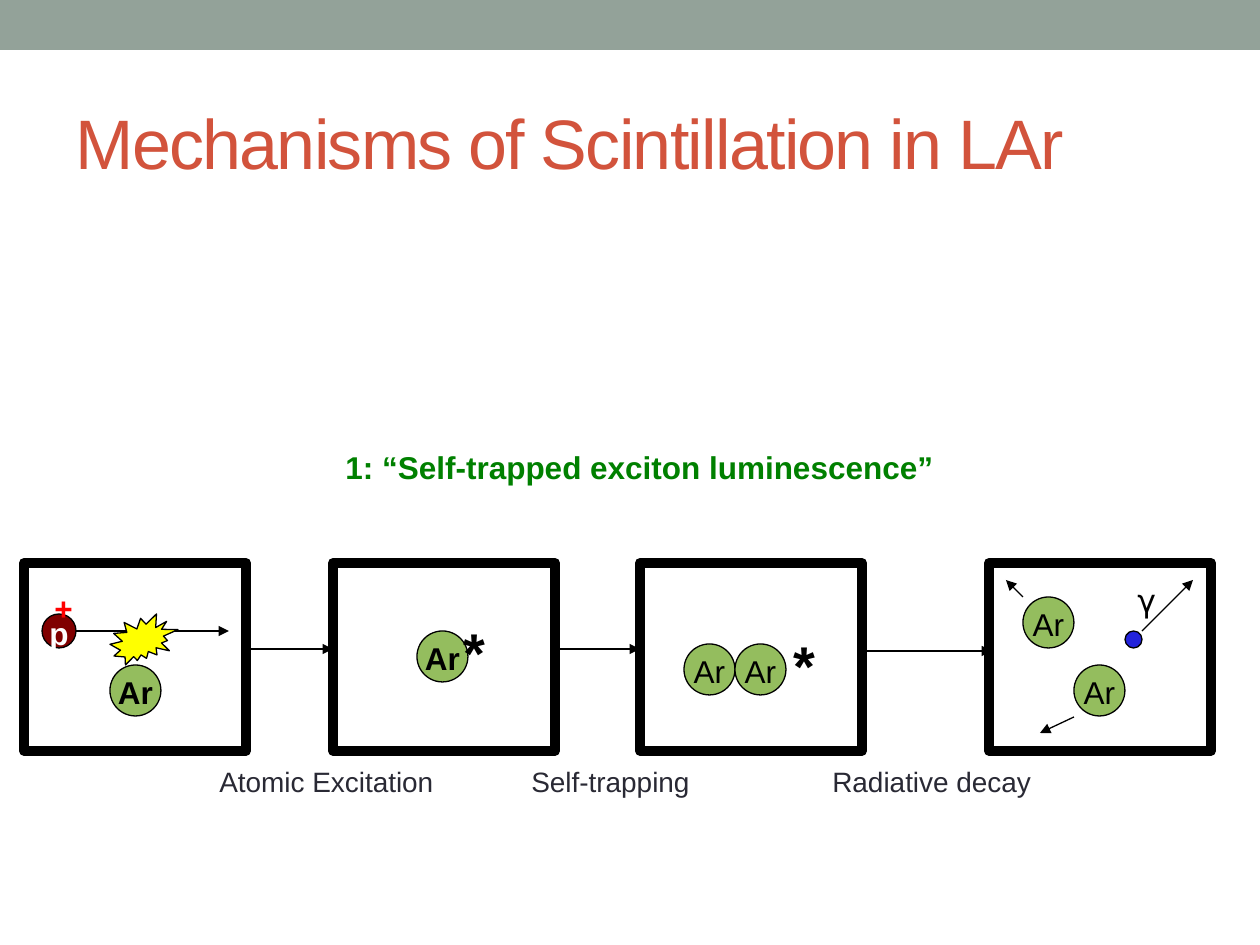
from dataclasses import dataclass

from pptx import Presentation
from pptx.dml.color import RGBColor
from pptx.enum.shapes import MSO_CONNECTOR, MSO_SHAPE
from pptx.enum.text import MSO_ANCHOR, PP_ALIGN
from pptx.oxml.ns import qn
from pptx.util import Emu, Pt
from lxml.etree import SubElement


@dataclass(frozen=True)
class Theme:
    font: str = "Arial"
    symbol_font: str = "DejaVu Sans"
    bar: str = "93A299"
    title: str = "D2533C"
    heading: str = "008000"
    caption: str = "292934"
    ink: str = "000000"
    paper: str = "FFFFFF"
    argon: str = "94BD5E"
    proton: str = "800000"
    charge: str = "FF0000"
    burst: str = "FFFF00"
    photon: str = "2323DC"
    title_size: int = 40
    star_size: int = 32
    label_size: int = 18
    caption_size: int = 16
    thin: float = 0.75
    thick: float = 5.67


T = Theme()
FRAME_TOP, FRAME_W, FRAME_H = 563, 222, 188
FRAME_LEFTS = (24, 333, 640, 989)
ATOM = 51
CAPTION_LEFTS = {"Atomic Excitation": 207, "Self-trapping": 519, "Radiative decay": 820}


def px(n):
    return Emu(round(n * 914400 / 126))


def rgb(value):
    return RGBColor.from_string(value)


def write(shape, text, size, color, bold=False, font=T.font, align=PP_ALIGN.LEFT):
    tf = shape.text_frame
    tf.text = text
    p = tf.paragraphs[0]
    p.alignment = align
    f = p.runs[0].font
    f.name, f.size, f.bold = font, Pt(size), bold
    f.color.rgb = rgb(color)


def add_title(s, text):
    title = s.shapes.title
    title.left, title.top, title.width, title.height = px(63), px(73), px(1134), px(136)
    title.text_frame.vertical_anchor = MSO_ANCHOR.MIDDLE
    write(title, text, T.title_size, T.title)
    title.text_frame.paragraphs[0].runs[0].font._element.set("spc", "-100")


def add_figure(s, kind, x, y, w, h, fill, line=T.thin):
    sp = s.shapes.add_shape(kind, px(x), px(y), px(w), px(h))
    sp.shadow.inherit = False
    sp.fill.solid()
    sp.fill.fore_color.rgb = rgb(fill)
    if line:
        sp.line.color.rgb = rgb(T.ink)
        sp.line.width = Pt(line)
    else:
        sp.line.fill.background()
    return sp


def add_frame(s, x):
    sp = add_figure(s, MSO_SHAPE.RECTANGLE, x, FRAME_TOP, FRAME_W, FRAME_H, T.paper, T.thick)
    SubElement(sp.line._get_or_add_ln(), qn("a:round"))


def add_particle(s, text, x, y, size, fill, color, bold):
    sp = add_figure(s, MSO_SHAPE.OVAL, x, y, size, size, fill)
    tf = sp.text_frame
    tf.word_wrap = False
    tf.vertical_anchor = MSO_ANCHOR.MIDDLE
    tf.margin_top, tf.margin_bottom = px(9), px(6)
    write(sp, text, T.label_size, color, bold, align=PP_ALIGN.CENTER)


def add_argon(s, x, y, bold=False):
    add_particle(s, "Ar", x, y, ATOM, T.argon, T.ink, bold)


def add_label(s, text, x, y, w, h, size, color, bold=False, font=T.font, inset=6):
    tb = s.shapes.add_textbox(px(x), px(y), px(w), px(h))
    tb.text_frame.word_wrap = True
    tb.text_frame.margin_top = px(inset)
    write(tb, text, size, color, bold, font)


def add_star(s, x, y):
    add_label(s, "*", x, y, 86, 67, T.star_size, T.ink, True, inset=10)


def add_arrow(s, x1, y1, x2, y2):
    c = s.shapes.add_connector(MSO_CONNECTOR.STRAIGHT, px(x1), px(y1), px(x2), px(y2))
    c.line.color.rgb = rgb(T.ink)
    c.line.width = Pt(T.thin)
    SubElement(c.line._get_or_add_ln(), qn("a:tailEnd"), type="triangle")
    SubElement(c._element.spPr, qn("a:effectLst"))


def add_excitation(s):
    add_argon(s, 110, 665, True)
    add_arrow(s, 59, 631, 229, 631)
    add_particle(s, "p", 42, 614, 34, T.proton, T.paper, True)
    add_figure(s, MSO_SHAPE.EXPLOSION2, 110, 614, 68, 51, T.burst)
    add_label(s, "+", 42, 580, 86, 43, T.label_size, T.charge, True, inset=9)


def add_excited_atom(s):
    add_argon(s, 417, 631, True)
    add_star(s, 451, 607)


def add_excited_dimer(s):
    for x in (684, 684 + ATOM):
        add_argon(s, x, 644)
    add_star(s, 781, 620)


def add_decay(s):
    add_argon(s, 1074, 665)
    add_argon(s, 1023, 597)
    add_arrow(s, 1023, 597, 1006, 580)
    add_arrow(s, 1074, 717, 1040, 733)
    add_figure(s, MSO_SHAPE.OVAL, 1125, 631, 17, 17, T.photon)
    add_arrow(s, 1142, 631, 1193, 580)
    add_label(s, "γ", 1125, 581, 86, 6, T.label_size, T.ink, font=T.symbol_font)


def main():
    prs = Presentation()
    prs.slide_width, prs.slide_height = px(1260), px(945)
    s = prs.slides.add_slide(prs.slide_layouts.get_by_name("Title Only"))
    add_figure(s, MSO_SHAPE.RECTANGLE, 0, 0, 1260, 50, T.bar, line=None)
    add_title(s, "Mechanisms of Scintillation in LAr")

    for x in FRAME_LEFTS:
        add_frame(s, x)
    add_excitation(s)
    add_excited_atom(s)
    add_excited_dimer(s)
    add_decay(s)
    for x1, x2, y in ((247, 333, 649), (554, 640, 649), (862, 992, 651)):
        add_arrow(s, x1, y, x2, y)

    add_label(s, "1: “Self-trapped exciton luminescence”", 333, 442, 810, 50,
              T.label_size, T.heading, True)
    for text, x in CAPTION_LEFTS.items():
        add_label(s, text, x, 759, 301, 47, T.caption_size, T.caption)
    prs.save("out.pptx")


if __name__ == "__main__":
    main()
